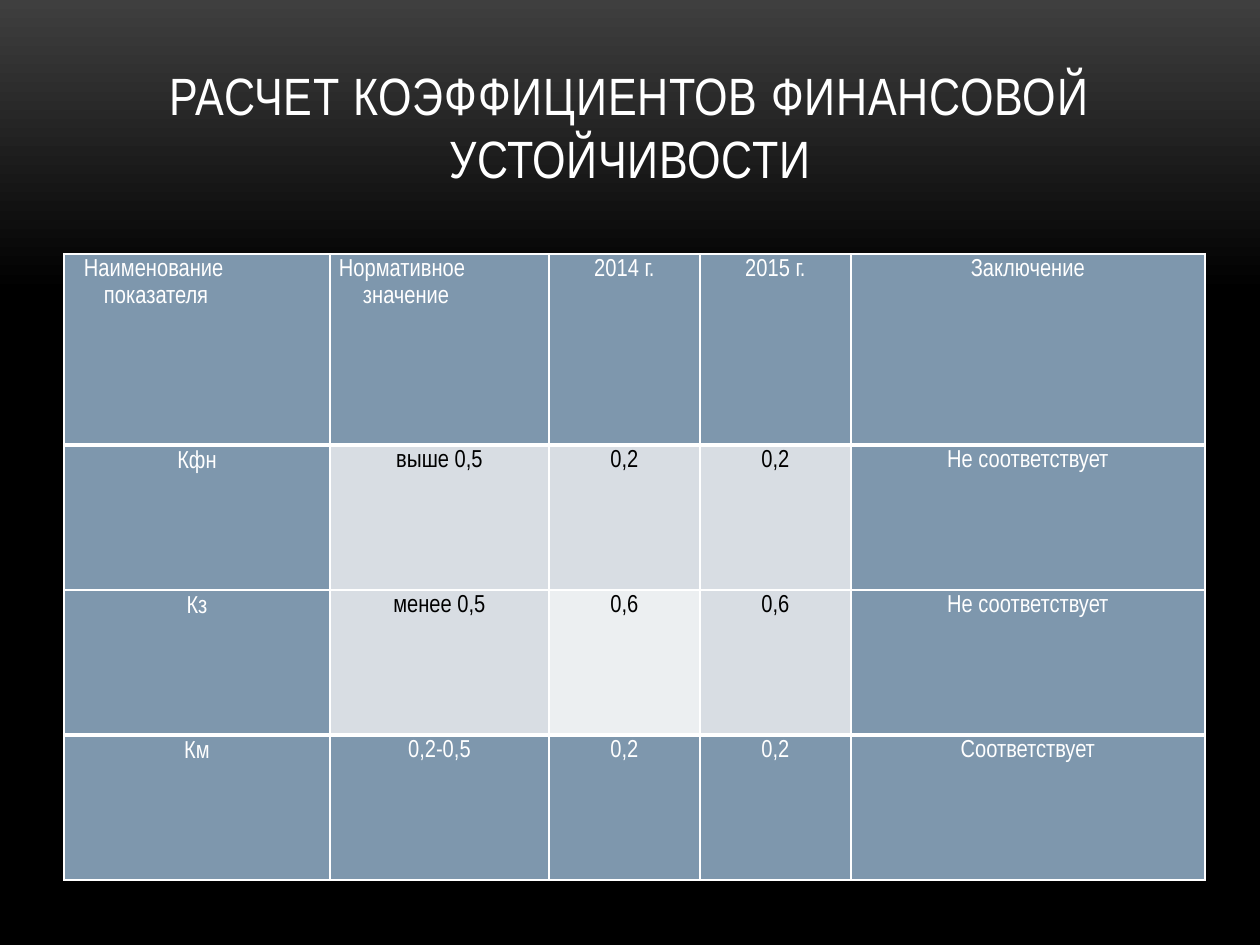
from dataclasses import dataclass

import pptx
import pptx.dml.color
import pptx.enum.text
import pptx.oxml
import pptx.oxml.ns
import pptx.util

EMU_PER_PX = 914400 / 126
ALIGN = pptx.enum.text.PP_ALIGN


@dataclass(frozen=True)
class Theme:
    font: str = "Arial Narrow"
    title_size: int = 30
    cell_size: int = 14
    white: str = "FFFFFF"
    black: str = "000000"
    glow: str = "3F3F3F"
    accent: str = "7E97AD"
    band: str = "D8DDE3"
    pale: str = "ECEFF1"
    thin: int = 1
    thick: int = 3


def px(n):
    return pptx.util.Emu(round(n * EMU_PER_PX))


def rgb(color):
    return pptx.dml.color.RGBColor.from_string(color)


class SlideBuilder:
    def __init__(self, s, theme):
        self.s, self.theme = s, theme

    def background(self):
        fill = self.s.background.fill
        fill.gradient()
        fill.gradient_angle = 270
        stops = ((0, self.theme.glow), (0.31, self.theme.black))
        for stop, (position, color) in zip(fill.gradient_stops, stops):
            stop.position = position
            stop.color.rgb = rgb(color)

    def run(self, p, text, size, color):
        r = p.add_run()
        r.text = text
        r.font.name = self.theme.font
        r.font.size = pptx.util.Pt(size)
        r.font.color.rgb = rgb(color)
        return r

    def title(self, text, left, top, width, height):
        sp = self.s.shapes.title
        sp.left, sp.top, sp.width, sp.height = map(px, (left, top, width, height))
        tf = sp.text_frame
        tf.word_wrap = True
        tf.auto_size = pptx.enum.text.MSO_AUTO_SIZE.NONE
        tf.vertical_anchor = pptx.enum.text.MSO_ANCHOR.BOTTOM
        p = tf.paragraphs[0]
        p.alignment = ALIGN.CENTER
        r = self.run(p, text, self.theme.title_size, self.theme.white)
        r.font._element.set("spc", "50")

    def borders(self, cell, widths):
        """Draw the left, right, top and bottom lines, widths in points."""
        tcPr = cell._tc.get_or_add_tcPr()
        for side, width in zip("LRTB", widths):
            tcPr.append(pptx.oxml.parse_xml(
                f'<a:ln{side} {pptx.oxml.ns.nsdecls("a")} w="{pptx.util.Pt(width)}">'
                f'<a:solidFill><a:srgbClr val="{self.theme.white}"/></a:solidFill>'
                f'</a:ln{side}>'))

    def cell(self, cell, text, fill, color, line_pt, widths, hanging=None):
        """Fill one cell; hanging is (left margin, first-line indent) in px."""
        cell.margin_left = cell.margin_right = 0
        cell.margin_top = cell.margin_bottom = 0
        self.borders(cell, widths)
        cell.fill.solid()
        cell.fill.fore_color.rgb = rgb(fill)
        p = cell.text_frame.paragraphs[0]
        p.line_spacing = pptx.util.Pt(line_pt)
        if hanging:
            margin, indent = hanging
            cell.margin_right = px(20)
            p.alignment = ALIGN.LEFT
            pPr = p._p.get_or_add_pPr()
            pPr.set("marL", str(px(margin)))
            pPr.set("indent", str(px(indent)))
        else:
            p.alignment = ALIGN.CENTER
        self.run(p, text, self.theme.cell_size, color)

    def table(self, rows, left, top, col_widths, row_heights, hanging):
        """Table with accented outer rows and columns and a banded middle."""
        t = self.theme
        last_row, last_col = len(rows) - 1, len(col_widths) - 1
        table = self.s.shapes.add_table(
            len(rows), len(col_widths), px(left), px(top),
            px(sum(col_widths)), px(sum(row_heights))).table
        for column, width in zip(table.columns, col_widths):
            column.width = px(width)
        for row, height in zip(table.rows, row_heights):
            row.height = px(height)
        for i, row in enumerate(rows):
            top_line = t.thick if i in (1, last_row) else t.thin
            bottom_line = t.thick if i in (0, last_row - 1) else t.thin
            for j, text in enumerate(row):
                accented = i in (0, last_row) or j in (0, last_col)
                fill = t.accent if accented else t.pale if (i, j) == (2, 2) else t.band
                self.cell(
                    table.cell(i, j), text, fill,
                    t.white if accented else t.black,
                    16.6 if i and j == 0 else 15.8,
                    (t.thin, t.thin, top_line, bottom_line),
                    hanging.get((i, j)))


def main():
    prs = pptx.Presentation()
    prs.slide_width, prs.slide_height = px(1260), px(945)
    slide = SlideBuilder(prs.slides.add_slide(prs.slide_layouts[5]), Theme())
    slide.background()
    slide.title("РАСЧЕТ КОЭФФИЦИЕНТОВ ФИНАНСОВОЙ УСТОЙЧИВОСТИ", 84, 38, 1092, 157)
    slide.table(
        [
            ("Наименование показателя", "Нормативное значение", "2014 г.", "2015 г.",
             "Заключение"),
            ("Кфн", "выше 0,5", "0,2", "0,2", "Не соответствует"),
            ("Кз", "менее 0,5", "0,6", "0,6", "Не соответствует"),
            ("Км", "0,2-0,5", "0,2", "0,2", "Соответствует"),
        ],
        left=64, top=254,
        col_widths=(266, 219, 151, 151, 354),
        row_heights=(191, 145, 145, 145),
        hanging={(0, 0): (40, -20), (0, 1): (33, -24)})
    prs.save("out.pptx")


if __name__ == "__main__":
    main()
